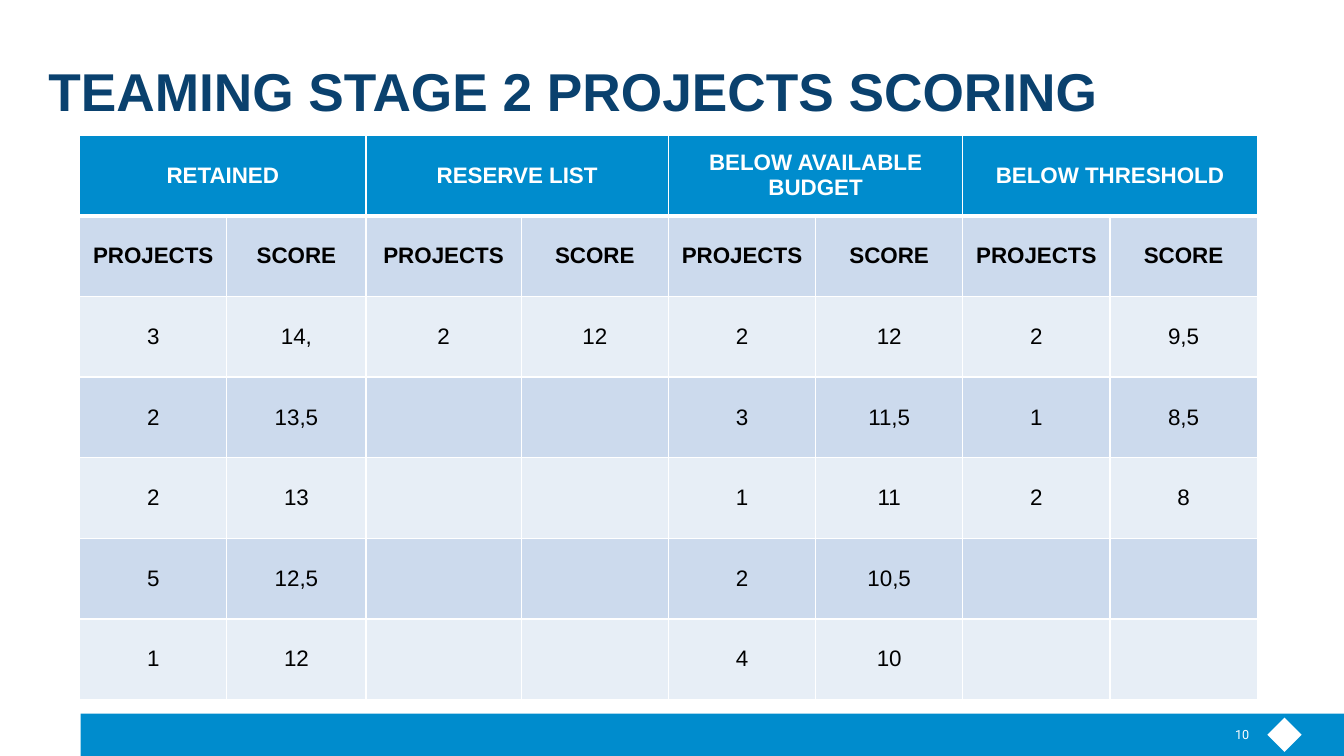
from lxml import etree
from pptx import Presentation
from pptx.dml.color import RGBColor
from pptx.enum.shapes import MSO_SHAPE
from pptx.enum.text import MSO_ANCHOR, PP_ALIGN
from pptx.oxml.ns import qn
from pptx.util import Inches, Pt

RECT, DIAMOND = MSO_SHAPE.RECTANGLE, MSO_SHAPE.DIAMOND
MIDDLE, BOTTOM = MSO_ANCHOR.MIDDLE, MSO_ANCHOR.BOTTOM
LEFT, CENTER, RIGHT = PP_ALIGN.LEFT, PP_ALIGN.CENTER, PP_ALIGN.RIGHT

TITLE = "TEAMING STAGE 2 PROJECTS SCORING"
PAGE = "10"
HEADS = ("PROJECTS", "SCORE")
GROUPS = [
    ("RETAINED", [("3", "14,"), ("2", "13,5"), ("2", "13"), ("5", "12,5"), ("1", "12")]),
    ("RESERVE LIST", [("2", "12")]),
    ("BELOW AVAILABLE BUDGET", [("2", "12"), ("3", "11,5"), ("1", "11"), ("2", "10,5"), ("4", "10")]),
    ("BELOW THRESHOLD", [("2", "9,5"), ("1", "8,5"), ("2", "8")]),
]
WIDTHS = [1.46, 1.38, 1.54] + [1.46] * 5
ROW = 0.8
COLORS = {
    "blue": "008CCD",
    "navy": "0A416E",
    "dark": "CCDAED",
    "light": "E7EEF6",
    "white": "FFFFFF",
    "black": "000000",
}


def color(name):
    return RGBColor.from_string(COLORS[name])


def style(frame, size, font, tint, bold, align, anchor):
    frame.vertical_anchor = anchor
    for para in frame.paragraphs:
        para.alignment = align
        for run in para.runs:
            run.font.size = Pt(size)
            run.font.name = font
            run.font.bold = bold
            run.font.color.rgb = color(tint)


def add_text(slide, box, text, *look):
    frame = slide.shapes.add_textbox(*map(Inches, box)).text_frame
    frame.word_wrap = True
    frame.margin_left = frame.margin_right = frame.margin_top = frame.margin_bottom = 0
    frame.text = text
    style(frame, *look)
    return frame


def add_block(slide, kind, box, fill):
    shape = slide.shapes.add_shape(kind, *map(Inches, box))
    shape.shadow.inherit = False
    shape.fill.solid()
    shape.fill.fore_color.rgb = color(fill)
    shape.line.fill.background()


def add_edges(cell, sides):
    props = cell._tc.get_or_add_tcPr()
    for side, width in sides.items():
        line = etree.SubElement(props, qn("a:ln" + side), w=str(Pt(width)))
        fill = etree.SubElement(line, qn("a:solidFill"))
        etree.SubElement(fill, qn("a:srgbClr"), val=COLORS["white"])


def add_scores(slide):
    count = 2 + max(len(scores) for _, scores in GROUPS)
    box = (0.79, 1.34, sum(WIDTHS), ROW * count)
    table = slide.shapes.add_table(count, len(WIDTHS), *map(Inches, box)).table
    for col, width in zip(table.columns, WIDTHS):
        col.width = Inches(width)
    for row in table.rows:
        row.height = Inches(ROW)

    lines = [[""] * len(WIDTHS) for _ in range(count)]
    for g, (name, scores) in enumerate(GROUPS):
        for r, pair in enumerate([(name, ""), HEADS] + scores):
            lines[r][2 * g:2 * g + 2] = pair

    for r, line in enumerate(lines):
        fill = "blue" if r == 0 else "dark" if r % 2 else "light"
        sides = {"L": 1, "R": 1, "T": 3 if r == 1 else 1, "B": 3 if r == 0 else 1}
        for c, text in enumerate(line):
            cell = table.cell(r, c)
            add_edges(cell, sides)
            cell.fill.solid()
            cell.fill.fore_color.rgb = color(fill)
            cell.vertical_anchor = MIDDLE
            cell.text_frame.text = text
            tint = "black" if r else "white"
            style(cell.text_frame, 16, "Arial", tint, r < 2, CENTER, MIDDLE)

    for c in range(0, len(WIDTHS), 2):
        table.cell(0, c).merge(table.cell(0, c + 1))


def main():
    deck = Presentation()
    deck.slide_width, deck.slide_height = Inches(13.33), Inches(7.5)
    slide = deck.slides.add_slide(deck.slide_layouts[6])
    add_block(slide, RECT, (0.8, 7.08, 12.53, 0.42), "blue")
    add_block(slide, DIAMOND, (12.57, 7.12, 0.34, 0.34), "white")
    title = add_text(slide, (0.48, 0.67, 12.06, 0.54), TITLE,
                     38, "Arial", "navy", True, LEFT, BOTTOM)
    title.paragraphs[0].line_spacing = 0.85
    add_scores(slide)
    add_text(slide, (11.82, 7.21, 0.57, 0.15), PAGE,
             9, "Roboto", "white", False, RIGHT, MIDDLE)
    deck.save("out.pptx")


if __name__ == "__main__":
    main()
